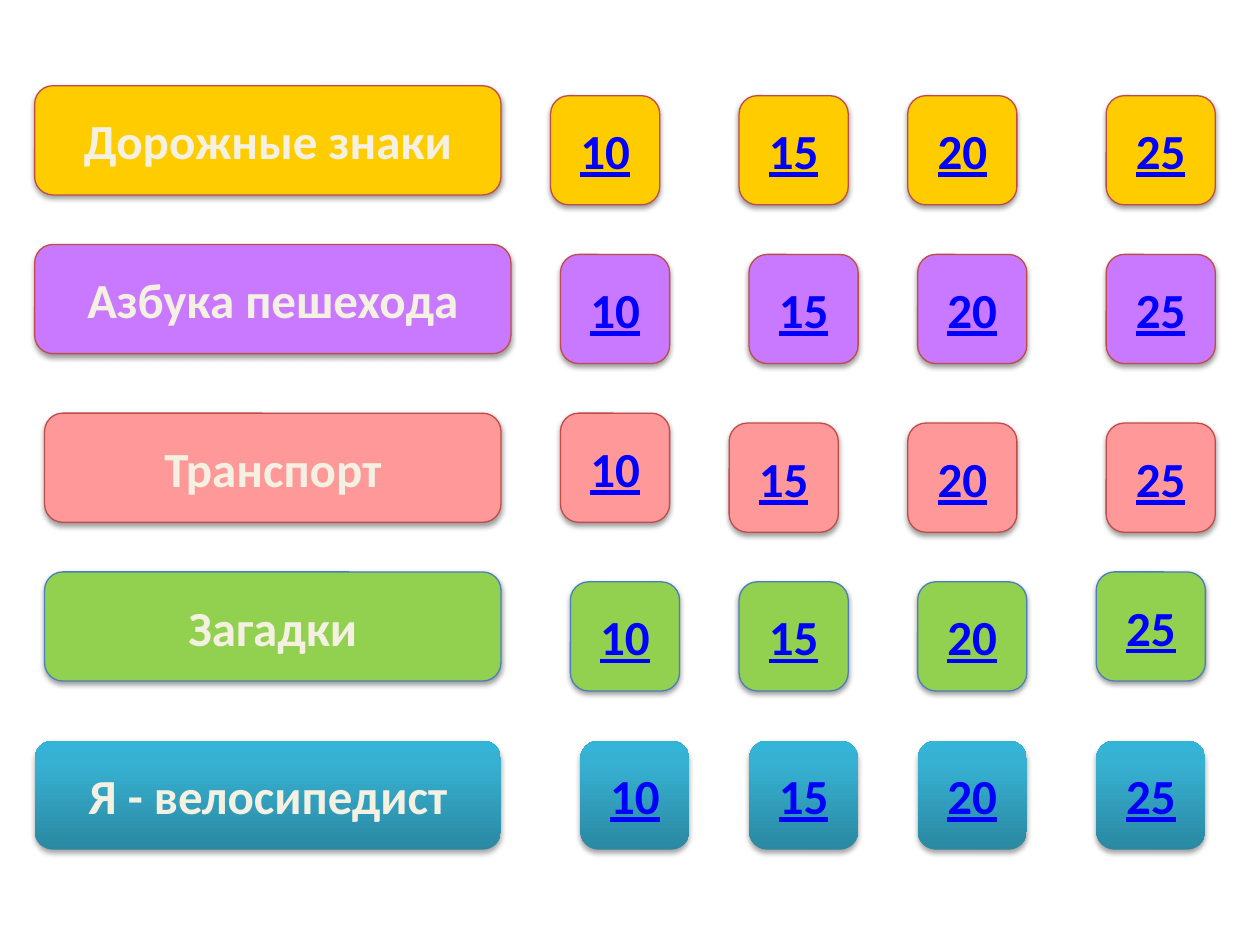
from copy import deepcopy

from lxml.etree import SubElement
from pptx import Presentation
from pptx.dml.color import RGBColor
from pptx.enum.shapes import MSO_SHAPE as Shape
from pptx.enum.text import MSO_ANCHOR as Anchor, PP_ALIGN as Align
from pptx.oxml.ns import qn
from pptx.util import Cm, Pt

BUTTON_SIZE = 2.2
TOPIC_COLOR, POINTS_COLOR, OUTLINE_COLOR = "F4F1E3", "0000FF", "054697"
RED_LINE, BLUE_LINE = "BF4C48", "4B7EBC"
POINTS = (10, 15, 20, 25)
BLUE_GRADIENT = ((0, "2A88A2"), (0.8, "37B1D2"), (1, "34B4D6"))

# topic, fill, line, (left, top, width) of the topic, (left, top) of each button
ROWS = (
    ("Дорожные знаки", "FFCC00", RED_LINE, (0.7, 1.73, 9.4),
     ((11.1, 1.93), (14.9, 1.93), (18.3, 1.93), (22.3, 1.93))),
    ("Азбука пешехода", "C979FF", RED_LINE, (0.7, 4.93, 9.6),
     ((11.3, 5.13), (15.1, 5.13), (18.5, 5.13), (22.3, 5.13))),
    ("Транспорт", "FF9999", RED_LINE, (0.9, 8.33, 9.2),
     ((11.3, 8.33), (14.7, 8.53), (18.3, 8.53), (22.3, 8.53))),
    ("Загадки", "92D050", BLUE_LINE, (0.9, 11.53, 9.2),
     ((11.5, 11.73), (14.9, 11.73), (18.5, 11.73), (22.1, 11.53))),
    ("Я - велосипедист", BLUE_GRADIENT, None, (0.7, 14.93, 9.4),
     ((11.7, 14.93), (15.1, 14.93), (18.5, 14.93), (22.1, 14.93))),
)


def rgb(value):
    return RGBColor.from_string(value)


def add_solid_color(parent, value):
    fill = SubElement(parent, qn("a:solidFill"))
    return SubElement(fill, qn("a:srgbClr"), val=value)


def set_fill(shape, fill):
    """Fill with one colour, or upwards with (position, colour) stops."""
    if isinstance(fill, str):
        shape.fill.solid()
        shape.fill.fore_color.rgb = rgb(fill)
        return
    shape.fill.gradient()
    shape.fill.gradient_angle = 90
    stop_list = shape._element.spPr.find(".//" + qn("a:gsLst"))
    while len(stop_list) < len(fill):
        stop_list.append(deepcopy(stop_list[0]))
    for stop, (position, color) in zip(shape.fill.gradient_stops, fill):
        stop.position = position
        stop.color.rgb = rgb(color)


def set_line(shape, color):
    if color is None:
        shape.line.fill.background()
        return
    shape.line.color.rgb = rgb(color)
    shape.line.width = Pt(0.75)


def set_shadow(shape, distance, opacity):
    shape.shadow.inherit = False
    effects = shape._element.spPr.find(qn("a:effectLst"))
    shadow = SubElement(effects, qn("a:outerShdw"), blurRad=str(Pt(3.1)),
                        dist=str(Pt(distance)), dir="5400000", rotWithShape="0")
    color = SubElement(shadow, qn("a:srgbClr"), val="000000")
    SubElement(color, qn("a:alpha"), val=str(opacity * 1000))


def set_text(shape, text, color, underline):
    frame = shape.text_frame
    frame.word_wrap = True
    frame.vertical_anchor = Anchor.MIDDLE
    paragraph = frame.paragraphs[0]
    paragraph.text = text
    paragraph.alignment = Align.CENTER
    font = paragraph.font
    font.name, font.size, font.bold = "Calibri", Pt(28), True
    font.color.rgb = rgb(color)
    if underline:
        font.underline = True
    properties = paragraph._p.pPr.find(qn("a:defRPr"))
    outline = SubElement(properties, qn("a:ln"), w=str(Pt(1)))
    add_solid_color(outline, OUTLINE_COLOR)
    properties.insert(0, outline)


def add_button(slide, left, top, width, text, text_color, fill, line,
               underline=False):
    shape = slide.shapes.add_shape(Shape.ROUNDED_RECTANGLE, Cm(left), Cm(top),
                                   Cm(width), Cm(BUTTON_SIZE))
    set_fill(shape, fill)
    set_line(shape, line)
    if line:
        set_shadow(shape, distance=1.6, opacity=38)
    else:
        set_shadow(shape, distance=1.8, opacity=35)
    set_text(shape, text, text_color, underline)


def main():
    presentation = Presentation()
    presentation.slide_width, presentation.slide_height = Cm(25.4), Cm(19.05)
    slide = presentation.slides.add_slide(presentation.slide_layouts[6])
    for topic, fill, line, topic_place, button_places in ROWS:
        add_button(slide, *topic_place, topic, TOPIC_COLOR, fill, line)
        for points, (left, top) in zip(POINTS, button_places):
            add_button(slide, left, top, BUTTON_SIZE, str(points), POINTS_COLOR,
                       fill, line, underline=True)
    presentation.save("out.pptx")


if __name__ == "__main__":
    main()
